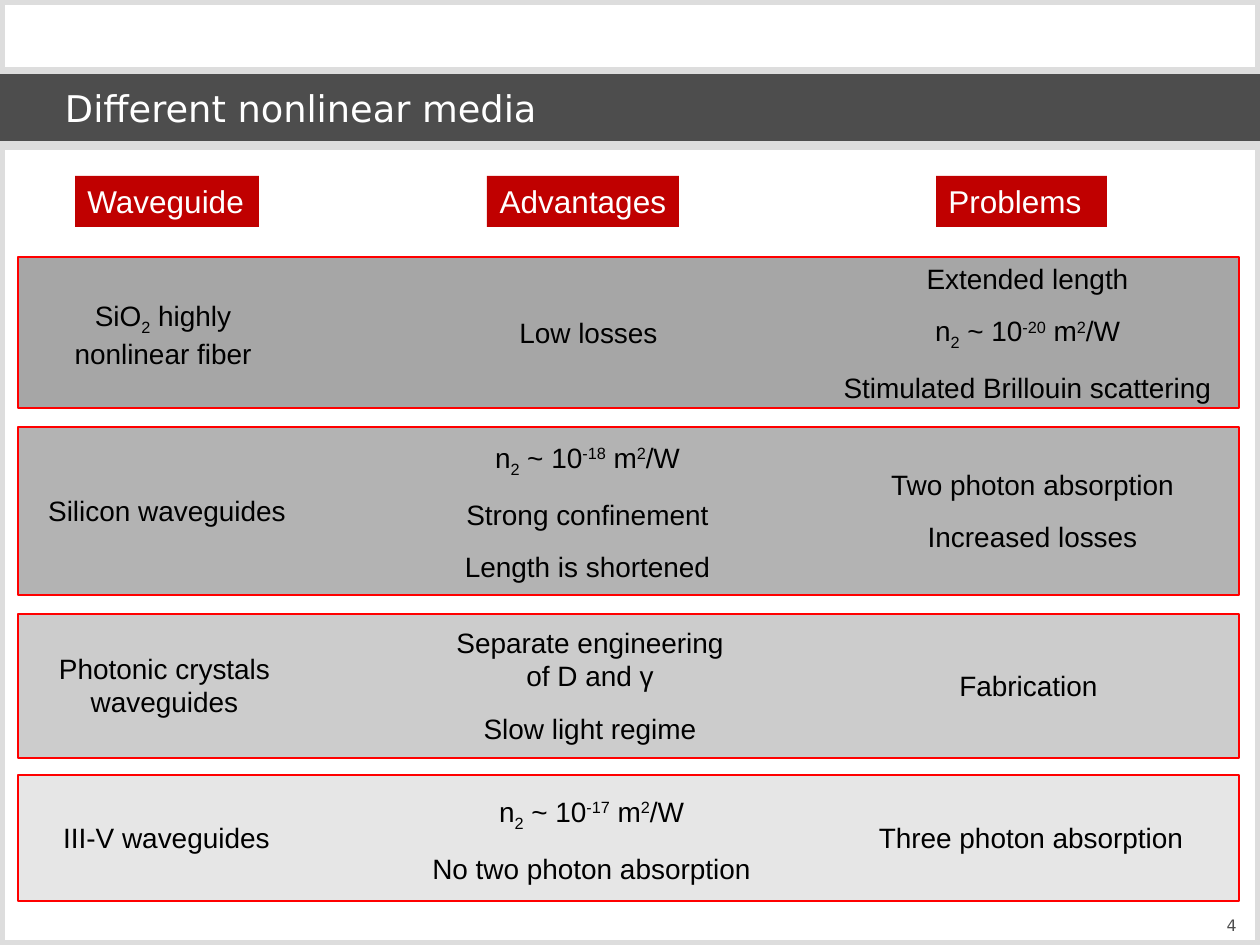
from pptx import Presentation
from pptx import util as u
from pptx.dml.color import RGBColor
from pptx.enum import shapes, text

PX = 914400 / 126  # EMU in one px

SUB, SUPER = -25000, 30000  # baseline shifts
CENTER, LEFT, RIGHT = text.PP_ALIGN.CENTER, text.PP_ALIGN.LEFT, text.PP_ALIGN.RIGHT
BODY, TITLE = "Arial", "DejaVu Sans"


def px(*values):
    return [u.Emu(round(v * PX)) for v in values]


def color(hex_string):
    return RGBColor.from_string(hex_string)


def add_rect(parent, box, fill, line=None, width=0.75):
    sp = parent.add_shape(shapes.MSO_SHAPE.RECTANGLE, *px(*box))
    sp.shadow.inherit = False
    sp.fill.solid()
    sp.fill.fore_color.rgb = color(fill)
    if line:
        sp.line.color.rgb = color(line)
        sp.line.width = u.Pt(width)
    else:
        sp.line.fill.background()
    return sp


def set_text(sp, paragraphs, size, font, rgb, align, anchor=text.MSO_ANCHOR.TOP):
    """Each paragraph is a string or a list of (string, baseline) pieces."""
    tf = sp.text_frame
    tf.word_wrap = True
    tf.vertical_anchor = anchor
    for i, pieces in enumerate(paragraphs):
        p = tf.add_paragraph() if i else tf.paragraphs[0]
        p.alignment = align
        if i:
            p.space_before = u.Pt(10.8)
        if isinstance(pieces, str):
            pieces = [(pieces, 0)]
        for string, baseline in pieces:
            r = p.add_run()
            r.text = string
            r.font.size = u.Pt(size)
            r.font.name = font
            r.font.color.rgb = color(rgb)
            if baseline:
                r.font._element.set("baseline", str(baseline))


def add_text(parent, box, *args):
    sp = parent.add_textbox(*px(*box))
    set_text(sp, *args)
    return sp


def add_row(parent, top, height, fill, cells):
    """A grouped band whose cells (left, width, height, paragraphs) are centred vertically."""
    group = parent.add_group_shape().shapes
    add_rect(group, (18, top, 1221, height), fill, "FF0000")
    for left, width, cell_height, paragraphs in cells:
        cell_top = top + (height - cell_height) // 2
        sp = add_text(group, (left, cell_top, width, cell_height),
                      paragraphs, 16, BODY, "000000", CENTER)
        sp.text_frame.auto_size = text.MSO_AUTO_SIZE.SHAPE_TO_FIT_TEXT


def kerr_index(exponent):
    return [("n", 0), ("2", SUB), (" ~ 10", 0), (exponent, SUPER),
            (" m", 0), ("2", SUPER), ("/W", 0)]


HEADERS = [
    (75, 184, "Waveguide", LEFT),
    (487, 192, "Advantages", CENTER),
    (936, 171, "Problems", LEFT),
]

ROWS = [
    (257, 151, "A6A6A6", [
        (33, 260, 81, [[("SiO", 0), ("2", SUB), (" highly nonlinear fiber", 0)]]),
        (474, 229, 47, ["Low losses"]),
        (828, 399, 154, ["Extended length", kerr_index("-20"),
                         "Stimulated Brillouin scattering"]),
    ]),
    (427, 168, "B3B3B3", [
        (33, 268, 47, ["Silicon waveguides"]),
        (450, 275, 154, [kerr_index("-18"), "Strong confinement", "Length is shortened"]),
        (873, 319, 100, ["Two photon absorption", "Increased losses"]),
    ]),
    (614, 144, "CCCCCC", [
        (44, 241, 81, ["Photonic crystals waveguides"]),
        (442, 296, 134, ["Separate engineering of D and γ", "Slow light regime"]),
        (946, 165, 47, ["Fabrication"]),
    ]),
    (775, 126, "E6E6E6", [
        (48, 237, 47, ["III-V waveguides"]),
        (417, 349, 100, [kerr_index("-17"), "No two photon absorption"]),
        (864, 334, 47, ["Three photon absorption"]),
    ]),
]


def main():
    prs = Presentation()
    prs.slide_width, prs.slide_height = px(1260, 945)
    s = prs.slides.add_slide(prs.slide_layouts[6]).shapes

    # Framed page areas and title band
    add_rect(s, (0, 0, 1260, 72), "FFFFFF", "DDDDDD", 6)
    add_rect(s, (0, 145, 1260, 800), "FFFFFF", "DDDDDD", 6)
    add_rect(s, (0, 79, 1260, 57), "4D4D4D", "4D4D4D", 6)
    title = add_text(s, (3, 79, 1230, 57), ["Different nonlinear media"],
                     21, TITLE, "FFFFFF", LEFT, text.MSO_ANCHOR.MIDDLE)
    title.text_frame.margin_left = px(62)[0]

    # Column headers
    for left, width, label, align in HEADERS:
        sp = add_rect(s, (left, 176, width, 51), "C00000")
        set_text(sp, [label], 18, BODY, "FFFFFF", align)

    # One band for each medium
    for row in ROWS:
        add_row(s, *row)

    # Slide number
    add_text(s, (955, 900, 294, 50), ["4"], 9, TITLE, "4D4D4D", RIGHT,
             text.MSO_ANCHOR.MIDDLE)

    prs.save("out.pptx")


if __name__ == "__main__":
    main()
